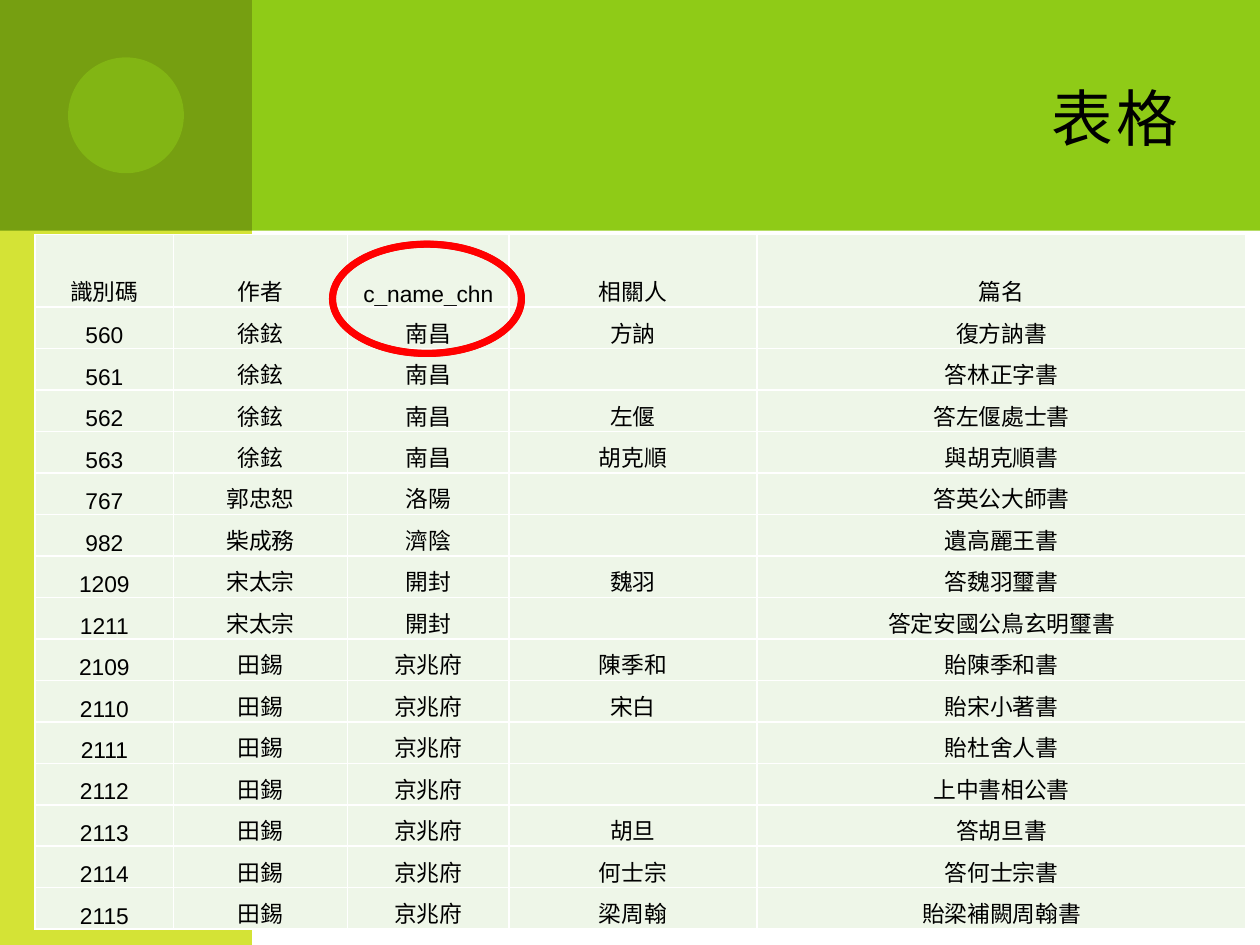
from lxml.etree import SubElement
from pptx import Presentation
from pptx.dml.color import RGBColor
from pptx.enum.shapes import MSO_SHAPE as Shape
from pptx.enum.text import MSO_ANCHOR as Anchor, PP_ALIGN as Align
from pptx.oxml.ns import qn
from pptx.util import Pt

COLORS = {
    "green": "8FCB17", "dark green": "769F11", "lime": "D4E336",
    "cell": "EEF6E8", "border": "FFFFFF", "text": "000000", "mark": "FF0000",
}
FONT = "Arial"
COLUMN_WIDTHS = [79.2, 99.4, 92.2, 141.8, 279.4]
HEADER_HEIGHT, ROW_HEIGHT = 41.5, 23.7
LETTERS = [
    ("識別碼", "作者", "c_name_chn", "相關人", "篇名"),
    ("560", "徐鉉", "南昌", "方訥", "復方訥書"),
    ("561", "徐鉉", "南昌", "", "答林正字書"),
    ("562", "徐鉉", "南昌", "左偃", "答左偃處士書"),
    ("563", "徐鉉", "南昌", "胡克順", "與胡克順書"),
    ("767", "郭忠恕", "洛陽", "", "答英公大師書"),
    ("982", "柴成務", "濟陰", "", "遺高麗王書"),
    ("1209", "宋太宗", "開封", "魏羽", "答魏羽璽書"),
    ("1211", "宋太宗", "開封", "", "答定安國公鳥玄明璽書"),
    ("2109", "田錫", "京兆府", "陳季和", "貽陳季和書"),
    ("2110", "田錫", "京兆府", "宋白", "貽宋小著書"),
    ("2111", "田錫", "京兆府", "", "貽杜舍人書"),
    ("2112", "田錫", "京兆府", "", "上中書相公書"),
    ("2113", "田錫", "京兆府", "胡旦", "答胡旦書"),
    ("2114", "田錫", "京兆府", "何士宗", "答何士宗書"),
    ("2115", "田錫", "京兆府", "梁周翰", "貽梁補闕周翰書"),
]


def color(name):
    return RGBColor.from_string(COLORS[name])


def add_block(page, kind, left, top, width, height, fill):
    block = page.shapes.add_shape(kind, Pt(left), Pt(top), Pt(width), Pt(height))
    block.shadow.inherit = False
    block.fill.solid()
    block.fill.fore_color.rgb = color(fill)
    block.line.fill.background()
    return block


def add_span(para, text, size):
    span = para.add_run()
    span.text = text
    span.font.size = Pt(size)
    span.font.name = FONT
    span.font.color.rgb = color("text")
    return span


def add_backdrop(page, left, top, width, height):
    side, band, dot = 144, 131.8, 66.2
    add_block(page, Shape.RECTANGLE, left + 36, top, width - 36, band, "green")
    add_block(page, Shape.RECTANGLE, left, top, side, height, "lime")
    add_block(page, Shape.RECTANGLE, left, top, side, band, "dark green")
    # Half-transparent disc centred in the corner square
    disc = add_block(page, Shape.OVAL, left + (side - dot) / 2,
                     top + (band - dot) / 2, dot, dot, "green")
    fill = disc.fill._xPr.find(qn("a:solidFill"))
    SubElement(fill[0], qn("a:alpha"), val="50000")


def add_title(page, left, top, width, height):
    box = page.shapes.add_textbox(Pt(left), Pt(top), Pt(width), Pt(height))
    frame = box.text_frame
    frame.word_wrap = True
    frame.vertical_anchor = Anchor.MIDDLE
    para = frame.paragraphs[0]
    para.alignment = Align.RIGHT
    props = add_span(para, "表格", 44).font._element
    props.set("spc", "200")
    props.set("cap", "small")


def set_borders(cell):
    props = cell._tc.get_or_add_tcPr()
    for index, side in enumerate(("lnL", "lnR", "lnT", "lnB")):
        line = props.makeelement(qn(f"a:{side}"), {"w": str(Pt(1))})
        fill = SubElement(line, qn("a:solidFill"))
        SubElement(fill, qn("a:srgbClr"), val=COLORS["border"])
        props.insert(index, line)


def fill_cell(cell, text):
    cell.fill.solid()
    cell.fill.fore_color.rgb = color("cell")
    cell.vertical_anchor = Anchor.BOTTOM
    cell.margin_left = cell.margin_right = cell.margin_top = Pt(0.72)
    cell.margin_bottom = 0
    set_borders(cell)
    para = cell.text_frame.paragraphs[0]
    para.alignment = Align.CENTER
    if text:
        add_span(para, text, 13)


def add_letter_table(page, left, top):
    height = HEADER_HEIGHT + ROW_HEIGHT * (len(LETTERS) - 1)
    table = page.shapes.add_table(
        len(LETTERS), len(COLUMN_WIDTHS), Pt(left), Pt(top),
        Pt(sum(COLUMN_WIDTHS)), Pt(height)).table
    table.first_row = table.horz_banding = False
    for column, width in zip(table.columns, COLUMN_WIDTHS):
        column.width = Pt(width)
    for index, (row, texts) in enumerate(zip(table.rows, LETTERS)):
        row.height = Pt(ROW_HEIGHT if index else HEADER_HEIGHT)
        for cell, text in zip(row.cells, texts):
            fill_cell(cell, text)


def add_column_mark(page, left, top, width, height):
    ring = add_block(page, Shape.DONUT, left, top, width, height, "green")
    ring.adjustments[0] = 0.001
    ring.line.color.rgb = color("mark")
    ring.line.width = Pt(4)


def main():
    deck = Presentation()
    deck.slide_width, deck.slide_height = Pt(720), Pt(540)
    page = deck.slides.add_slide(deck.slide_layouts[6])
    add_backdrop(page, 0, 0, 720, 540)
    add_title(page, 192, 18, 492, 90)
    add_letter_table(page, 20, 134)
    add_column_mark(page, 190, 139.5, 108, 62.5)
    deck.save("out.pptx")


if __name__ == "__main__":
    main()
